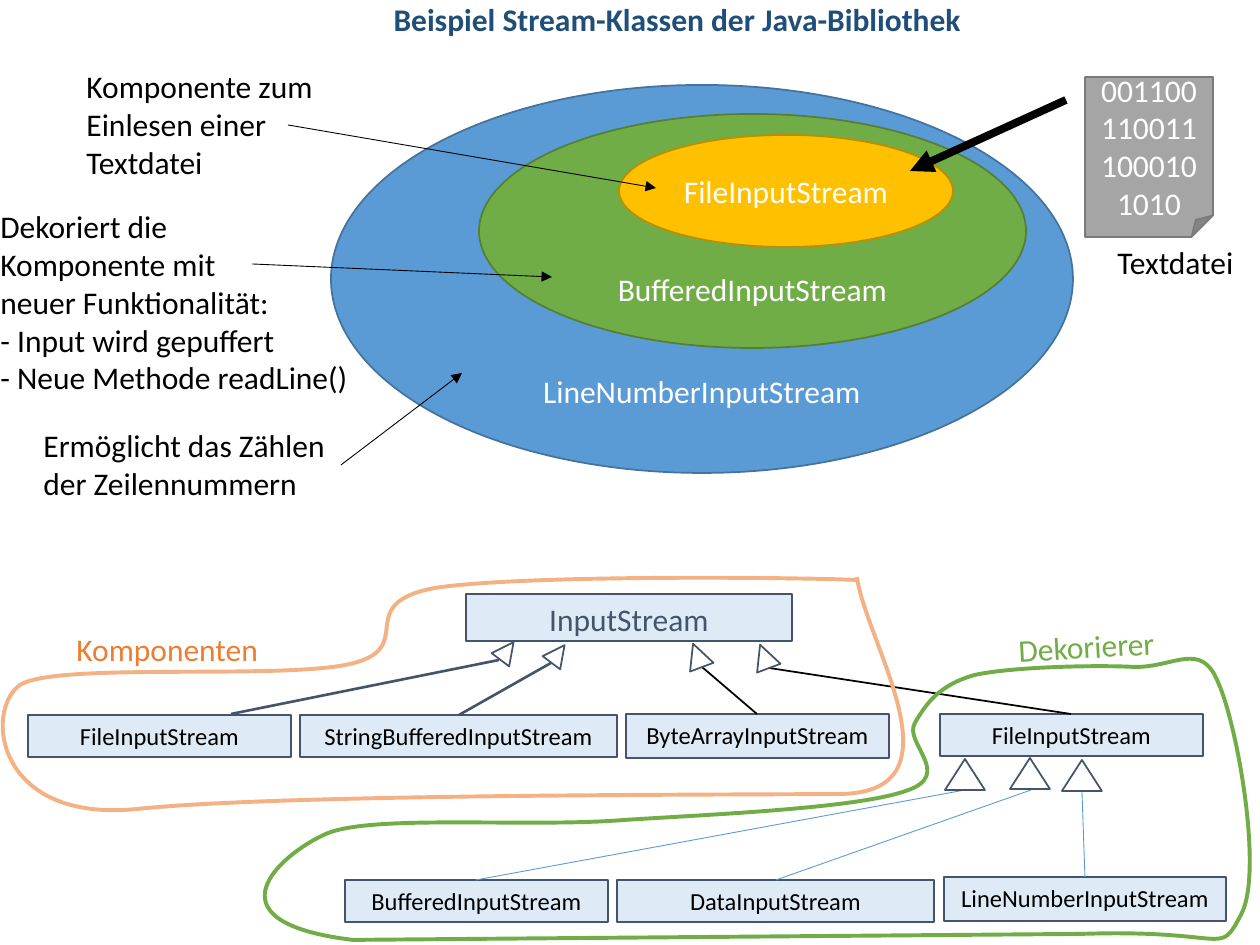
import lxml.etree
import pptx
import pptx.dml.color
import pptx.enum.shapes
import pptx.enum.text
import pptx.oxml
import pptx.oxml.ns
import pptx.util

PX = 7257  # EMU per pixel at 126 pixels to the inch
SHAPES = pptx.enum.shapes.MSO_SHAPE
ANCHOR = pptx.enum.text.MSO_ANCHOR
ALIGN = pptx.enum.text.PP_ALIGN
STRAIGHT = pptx.enum.shapes.MSO_CONNECTOR.STRAIGHT
NAVY, BLACK, WHITE = "44546A", "000000", "FFFFFF"


def color(value):
    return pptx.dml.color.RGBColor.from_string(value)


def write(box, lines, ink, size=18, align=ALIGN.LEFT, anchor=ANCHOR.TOP, wrap=True, bold=False):
    frame = box.text_frame
    settings = {"auto_size": pptx.enum.text.MSO_AUTO_SIZE.NONE, "word_wrap": wrap, "vertical_anchor": anchor}
    for name, value in settings.items():
        setattr(frame, name, value)
    frame.text = "\n".join(lines)
    for para in frame.paragraphs:
        para.alignment = align
        for span in para.runs:
            for name, value in {"name": "Calibri", "size": pptx.util.Pt(size), "bold": bold}.items():
                setattr(span.font, name, value)
            span.font.color.rgb = color(ink)


deck = pptx.Presentation()
deck.slide_width = pptx.util.Inches(10)
deck.slide_height = pptx.util.Inches(7.5)
page = deck.slides.add_slide(deck.slide_layouts[5])

# Title
title = page.shapes.title
for name, value in {"left": 381, "top": -6, "width": 597, "height": 89}.items():
    setattr(title, name, value * PX)
write(title, ["Beispiel Stream-Klassen der Java-Bibliothek"], "1F4E79", wrap=False, bold=True)

# Nested streams, text file and class boxes: kind, frame, fill, line, text, ink, size, anchor
figures = [
    (SHAPES.OVAL, (331, 85, 742, 388), "5B9BD5", "43739E", "LineNumberInputStream", WHITE, 18, ANCHOR.BOTTOM),
    (SHAPES.OVAL, (479, 114, 547, 234), "70AD47", "538035", "BufferedInputStream", WHITE, 18, ANCHOR.BOTTOM),
    (SHAPES.OVAL, (619, 135, 334, 112), "FFC000", "BD8E00", "FileInputStream", WHITE, 18, ANCHOR.MIDDLE),
    (SHAPES.FOLDED_CORNER, (1085, 77, 128, 160), "A5A5A5", "7A7A7A",
     "0011001100111000101010", WHITE, 18, ANCHOR.MIDDLE),
    (SHAPES.RECTANGLE, (466, 594, 326, 47), "DEEBF7", NAVY, "InputStream", NAVY, 18, ANCHOR.TOP),
]
classes = [
    ("FileInputStream", 28, 715, 263, 42),
    ("StringBufferedInputStream", 300, 715, 317, 42),
    ("ByteArrayInputStream", 626, 714, 263, 44),
    ("FileInputStream", 940, 714, 263, 42),
    ("BufferedInputStream", 345, 880, 263, 42),
    ("DataInputStream", 617, 880, 317, 42),
    ("LineNumberInputStream", 944, 877, 282, 44),
]
for label, *frame in classes:
    figures.append((SHAPES.RECTANGLE, frame, "DEEBF7", NAVY, label, BLACK, 14, ANCHOR.TOP))
for kind, frame, fill, edge, label, ink, size, anchor in figures:
    figure = page.shapes.add_shape(kind, *[length * PX for length in frame])
    figure.shadow.inherit = False
    figure.fill.solid()
    figure.fill.fore_color.rgb = color(fill)
    figure.line.color.rgb = color(edge)
    figure.line.width = pptx.util.Pt(1)
    write(figure, [label], ink, size, ALIGN.CENTER, anchor)

# Arrows and inheritance lines: start, end, colour, width, arrowhead
links = [
    (1066, 100, 910, 171, BLACK, 4.5, True),
    (288, 125, 656, 188, BLACK, 0.5, True),
    (252, 264, 552, 277, BLACK, 0.5, True),
    (341, 465, 462, 373, BLACK, 0.5, True),
    (231, 714, 499, 660, NAVY, 1.5, False),
    (459, 715, 551, 663, NAVY, 1.5, False),
    (702, 667, 757, 714, BLACK, 1, False),
    (769, 668, 1071, 714, BLACK, 1, False),
    (476, 880, 965, 790, "5B9BD5", 0.5, False),
    (776, 880, 1031, 790, "5B9BD5", 0.5, False),
    (1082, 791, 1085, 877, "5B9BD5", 0.5, False),
]
for *ends, ink, width, arrow in links:
    link = page.shapes.add_connector(STRAIGHT, *[length * PX for length in ends])
    link.line.color.rgb = color(ink)
    link.line.width = pptx.util.Pt(width)
    if arrow:
        head = pptx.oxml.parse_xml(f'<a:tailEnd {pptx.oxml.ns.nsdecls("a")} type="triangle"/>')
        link.line._get_or_add_ln().append(head)
    link._element.spPr.append(pptx.oxml.parse_xml(f'<a:effectLst {pptx.oxml.ns.nsdecls("a")}/>'))

# Hollow inheritance triangles: frame and rotation
triangles = [
    (496, 640, 22, 22, 36.9), (547, 643, 22, 22, 36.9),
    (685, 643, 25, 25, 339.5), (752, 644, 25, 25, 339.5),
    (945, 759, 40, 31, 0), (1010, 758, 40, 31, 0), (1062, 760, 40, 31, 0),
]
for *frame, angle in triangles:
    triangle = page.shapes.add_shape(SHAPES.ISOSCELES_TRIANGLE, *[length * PX for length in frame])
    triangle.rotation = angle
    triangle.shadow.inherit = False
    triangle.fill.background()
    triangle.line.color.rgb = color(NAVY)
    triangle.line.width = pptx.util.Pt(1)

# Outlines around both families: colour, frame corners, then drawing steps
outlines = [
    ("70AD47", (265, 659), (1250, 940), [
        ("moveTo", (1241, 915)),
        ("cubicBezTo", (1264, 873), (1237, 723), (1218, 682)),
        ("cubicBezTo", (1201, 640), (1174, 668), (1134, 667)),
        ("cubicBezTo", (1094, 665), (1012, 667), (975, 675)),
        ("cubicBezTo", (939, 685), (926, 704), (915, 723)),
        ("cubicBezTo", (903, 743), (955, 775), (906, 791)),
        ("cubicBezTo", (858, 808), (722, 814), (625, 820)),
        ("cubicBezTo", (528, 828), (372, 814), (326, 834)),
        ("cubicBezTo", (281, 854), (202, 922), (353, 940)),
        ("lnTo", (1082, 934)),
        ("cubicBezTo", (1231, 929), (1218, 958), (1241, 915)),
        ("close",),
    ]),
    ("F4B183", (3, 577), (904, 809), [
        ("moveTo", (857, 580)),
        ("cubicBezTo", (784, 577), (518, 575), (435, 588)),
        ("cubicBezTo", (350, 604), (420, 648), (350, 664)),
        ("cubicBezTo", (282, 680), (55, 662), (20, 685)),
        ("cubicBezTo", (-16, 711), (-4, 823), (137, 809)),
        ("cubicBezTo", (280, 794), (717, 795), (842, 794)),
        ("cubicBezTo", (965, 791), (866, 643), (857, 577)),
    ]),
]
qn = pptx.oxml.ns.qn
for ink, (left, top), corner, steps in outlines:
    builder = page.shapes.build_freeform(left, top, scale=PX)
    builder.add_line_segments([corner], close=False)
    outline = builder.convert_to_shape()
    route = next(outline._element.iter(qn("a:path")))
    for old in list(route):
        route.remove(old)
    for command, *points in steps:
        step = lxml.etree.SubElement(route, qn(f"a:{command}"))
        for x, y in points:
            lxml.etree.SubElement(step, qn("a:pt"), x=str(x - left), y=str(y - top))
    outline.shadow.inherit = False
    outline.fill.background()
    outline.line.color.rgb = color(ink)
    outline.line.width = pptx.util.Pt(2.25)

# Labels: frame, rotation, colour, wrapping, lines
labels = [
    (1105, 237, 142, 50, 0, BLACK, False, ["Textdatei"]),
    (74, 61, 319, 127, 0, BLACK, True, ["Komponente zum Einlesen einer Textdatei"]),
    (-12, 201, 386, 204, 0, BLACK, True, [
        "Dekoriert die \vKomponente mit \vneuer Funktionalität:",
        "- Input wird gepuffert", "- Neue Methode readLine()"]),
    (31, 420, 310, 89, 0, BLACK, False, ["Ermöglicht das Zählen", "der Zeilennummern"]),
    (1006, 621, 163, 50, 356.8, "70AD47", False, ["Dekorierer"]),
    (64, 624, 209, 50, 0, "ED7D31", False, ["Komponenten"]),
]
for *frame, angle, ink, wrap, lines in labels:
    box = page.shapes.add_textbox(*[length * PX for length in frame])
    box.rotation = angle
    write(box, lines, ink, wrap=wrap)

deck.save("out.pptx")
